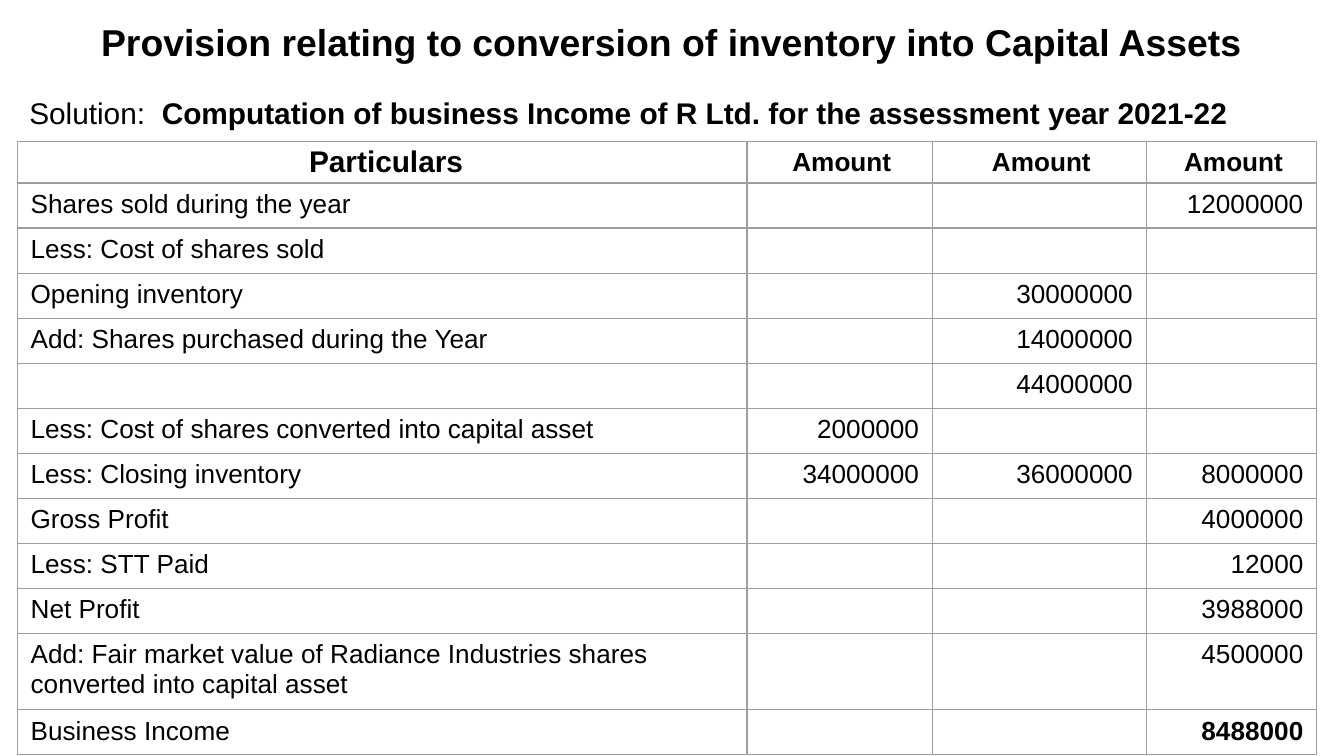
from lxml.etree import SubElement
from pptx import Presentation
from pptx.dml.color import RGBColor
from pptx.enum.text import MSO_ANCHOR, MSO_AUTO_SIZE, PP_ALIGN
from pptx.oxml.ns import qn
from pptx.util import Pt

FONT = "Arial"
BLACK = "000000"
GRID = "9E9E9E"
COLUMN_WIDTHS = [391, 99.4, 114.5, 91.4]
HEADER_HEIGHT = 22.3
LINE_HEIGHT = 24.15
TWO_LINE_HEIGHT = 41
HEADINGS = ["Particulars", "Amount", "Amount", "Amount"]
ENTRIES = [
    ["Shares sold during the year", "", "", "12000000"],
    ["Less: Cost of shares sold", "", "", ""],
    ["Opening inventory", "", "30000000", ""],
    ["Add: Shares purchased during the Year", "", "14000000", ""],
    ["", "", "44000000", ""],
    ["Less: Cost of shares converted into capital asset", "2000000", "", ""],
    ["Less: Closing inventory", "34000000", "36000000", "8000000"],
    ["Gross Profit", "", "", "4000000"],
    ["Less: STT Paid", "", "", "12000"],
    ["Net Profit", "", "", "3988000"],
    ["Add: Fair market value of Radiance Industries shares\n"
     "converted into capital asset", "", "", "4500000"],
    ["Business Income", "", "", "8488000"],
]


def color(value):
    """Turn a hex string into a colour."""
    return RGBColor.from_string(value)


def format_span(span, size, bold=False):
    """Give a run its font, size, weight and colour."""
    span.font.name = FONT
    span.font.size = Pt(size)
    span.font.bold = bold
    span.font.color.rgb = color(BLACK)


def format_frame(frame, size, align, bold=False):
    """Align every paragraph of a text frame and format its runs."""
    for para in frame.paragraphs:
        para.alignment = align
        for span in para.runs:
            format_span(span, size, bold)


def add_title(page, text):
    """Fill and place the title placeholder."""
    title = page.shapes.title
    title.left, title.top, title.width, title.height = Pt(0), Pt(0), Pt(720), Pt(44.6)
    frame = title.text_frame
    frame.text = text
    frame.auto_size = MSO_AUTO_SIZE.NONE
    frame.vertical_anchor = MSO_ANCHOR.MIDDLE
    format_frame(frame, 20, PP_ALIGN.CENTER, True)


def add_solution_line(page, label, text):
    """Add the plain label followed by the bold table caption."""
    box = page.shapes.add_textbox(Pt(0), Pt(44.6), Pt(720), Pt(360.4))
    box.text_frame.word_wrap = True
    para = box.text_frame.paragraphs[0]
    para.line_spacing = 1.15
    para.space_before = Pt(3.6)
    para._p.get_or_add_pPr().set("marL", str(Pt(8.64)))
    for words, bold in ((label, False), (text, True)):
        span = para.add_run()
        span.text = words
        format_span(span, 16, bold)


def add_borders(cell):
    """Draw thin grey lines on all four sides of a cell."""
    properties = cell._tc.get_or_add_tcPr()
    for side in ("lnL", "lnR", "lnT", "lnB"):
        line = SubElement(properties, qn(f"a:{side}"), w=str(Pt(0.75)))
        fill = SubElement(line, qn("a:solidFill"))
        SubElement(fill, qn("a:srgbClr"), val=GRID)


def set_margins(cell, horizontal, vertical):
    """Set the side and the top and bottom margins of a cell."""
    cell.margin_left = cell.margin_right = Pt(horizontal)
    cell.margin_top = cell.margin_bottom = Pt(vertical)


def fill_heading(cell, text, size, indent):
    """Write a centred bold column heading."""
    cell.text_frame.text = text
    set_margins(cell, 0, 0)
    cell.vertical_anchor = MSO_ANCHOR.MIDDLE
    format_frame(cell.text_frame, size, PP_ALIGN.CENTER, True)
    cell.text_frame.paragraphs[0]._p.get_or_add_pPr().set("marL", str(Pt(indent)))


def fill_entry(cell, text, align, bold):
    """Write a description or an amount."""
    cell.text_frame.text = text
    set_margins(cell, 7.2, 3.6 if text else 0)
    format_frame(cell.text_frame, 14, align, bold)


def add_computation(page):
    """Add the table that computes the business income."""
    heights = [HEADER_HEIGHT] + [
        TWO_LINE_HEIGHT if "\n" in entry[0] else LINE_HEIGHT for entry in ENTRIES]
    table = page.shapes.add_table(
        len(heights), len(COLUMN_WIDTHS), Pt(9.2), Pt(75.8),
        Pt(sum(COLUMN_WIDTHS)), Pt(sum(heights))).table
    table.first_row = False
    table.horz_banding = False
    for column, width in zip(table.columns, COLUMN_WIDTHS):
        column.width = Pt(width)
    for row, height in zip(table.rows, heights):
        row.height = Pt(height)
    for cell in table.iter_cells():
        add_borders(cell)
        cell.fill.background()
    for index, heading in enumerate(HEADINGS):
        size, indent = (14, 2.16) if index else (16, 4.32)
        fill_heading(table.cell(0, index), heading, size, indent)
    for number, entry in enumerate(ENTRIES, 1):
        for index, text in enumerate(entry):
            align = PP_ALIGN.RIGHT if index else PP_ALIGN.LEFT
            is_total = number == len(ENTRIES) and index > 0
            fill_entry(table.cell(number, index), text, align, is_total)


def main():
    """Build the slide and save the deck."""
    deck = Presentation()
    deck.slide_width, deck.slide_height = Pt(720), Pt(405)
    page = deck.slides.add_slide(deck.slide_layouts[5])
    add_title(page, "Provision relating to conversion of inventory into Capital Assets")
    add_solution_line(
        page, "Solution: ",
        " Computation of business Income of R Ltd. for the assessment year 2021-22")
    add_computation(page)
    deck.save("out.pptx")


if __name__ == "__main__":
    main()
